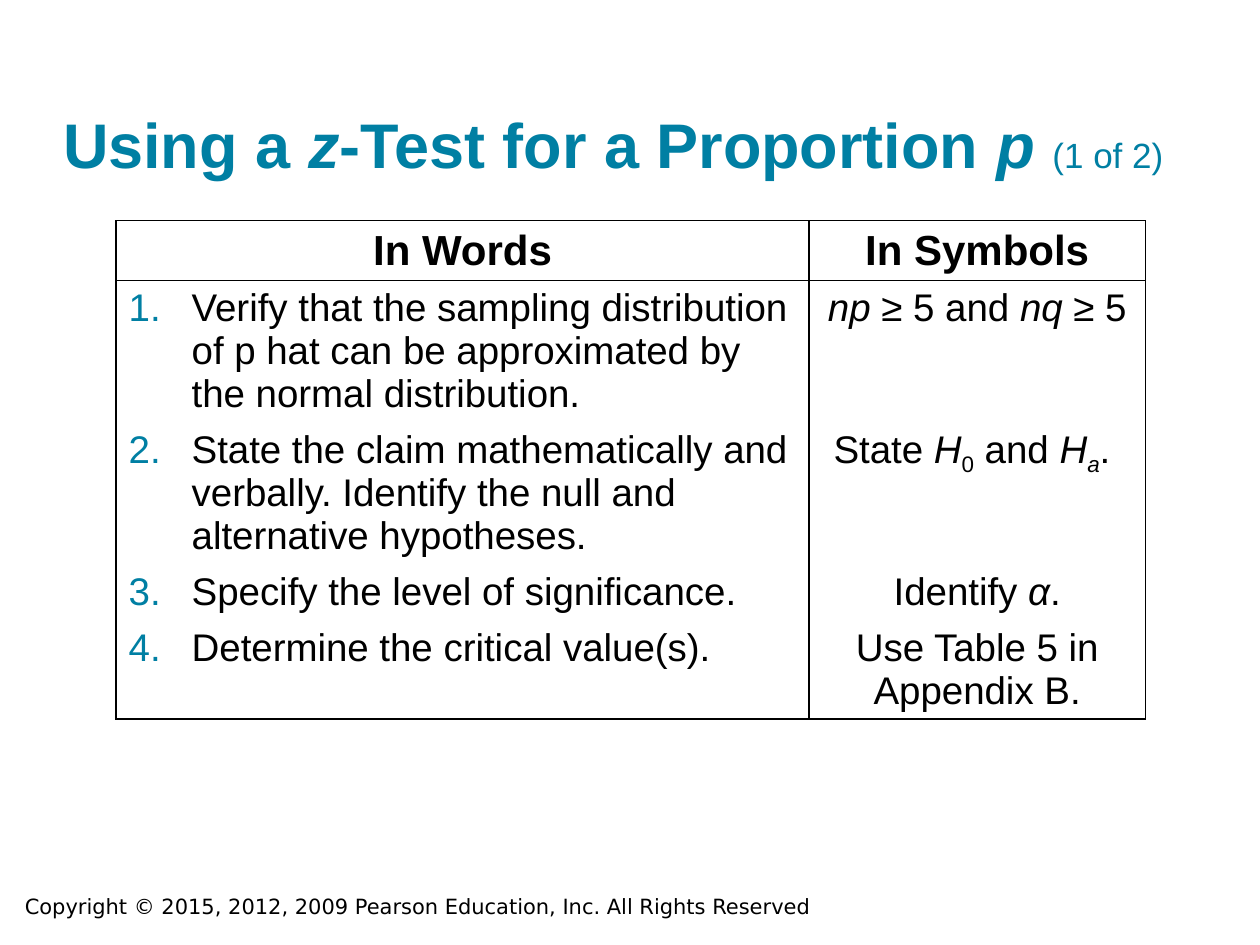
from lxml import etree
from pptx import Presentation
from pptx.dml.color import RGBColor
from pptx.enum.text import MSO_ANCHOR, MSO_AUTO_SIZE, PP_ALIGN
from pptx.oxml import parse_xml
from pptx.oxml.ns import nsdecls, qn
from pptx.util import Cm, Pt

LEFT, MID = PP_ALIGN.LEFT, PP_ALIGN.CENTER
LOW, NONE = MSO_ANCHOR.BOTTOM, MSO_AUTO_SIZE.NONE
TEAL, BLACK, WHITE = "007FA3", "000000", "FFFFFF"
hue = RGBColor.from_string


def write(frame, runs, size=22, font="Arial", color=BLACK, bold=False, align=LEFT, num=None):
    para = frame.paragraphs[0]
    para.alignment = align
    if num:
        props = para._p.get_or_add_pPr()
        props.set("marL", str(Cm(1.27)))
        props.set("indent", str(-Cm(1.27)))
        tint = etree.SubElement(props, qn("a:buClr"))
        etree.SubElement(tint, qn("a:srgbClr"), val=TEAL)
        etree.SubElement(props, qn("a:buFont"), typeface="+mj-lt")
        etree.SubElement(props, qn("a:buAutoNum"), type="arabicPeriod", startAt=str(num))
    for text, *marks in runs:
        run = para.add_run()
        run.text = text
        run.font.name = font
        run.font.size = Pt(20 if "small" in marks else size)
        run.font.bold = bold and "small" not in marks
        run.font.italic = "it" in marks
        run.font.color.rgb = hue(color)
        if "sub" in marks:
            run._r.get_or_add_rPr().set("baseline", "-25000")


def edge(cell, side, shown):
    fill = f'<a:solidFill><a:srgbClr val="{BLACK}"/></a:solidFill>' if shown else "<a:noFill/>"
    line = f'<a:ln{side} {nsdecls("a")} w="12700">{fill}</a:ln{side}>'
    cell._tc.get_or_add_tcPr().append(parse_xml(line))


deck = Presentation()
deck.slide_width, deck.slide_height = Cm(25.4), Cm(19.05)
slide = deck.slides.add_slide(deck.slide_layouts[5])

title = slide.shapes.title
title.left, title.top, title.width, title.height = Cm(1.27), Cm(0.61), Cm(22.86), Cm(3.05)
frame = title.text_frame
frame.margin_left = frame.margin_right = frame.margin_top = frame.margin_bottom = 0
frame.vertical_anchor = LOW
frame.auto_size = NONE
frame.word_wrap = True
write(frame, [("Using a ",), ("z", "it"), ("-Test for a Proportion ",), ("p ", "it"),
              ("(1 of 2)", "small")], size=36, color=TEAL, bold=True)

steps = [
    ("Verify that the sampling distribution of p hat can be approximated by the normal distribution.",
     [("np", "it"), (" ≥ 5 and ",), ("nq", "it"), (" ≥ 5",)]),
    ("State the claim mathematically and verbally. Identify the null and alternative hypotheses.",
     [("State ",), ("H", "it"), ("0", "sub"), (" and ",), ("H", "it"), ("a", "it", "sub"), (". ",)]),
    ("Specify the level of significance.", [("Identify ",), ("α", "it"), (".",)]),
    ("Determine the critical value(s).", [("Use Table 5 in Appendix B.",)]),
]
wide = [13.97, 6.78]
high = [1.2, 2.85, 2.85, 1.13, 2]
last = len(steps)
grid = slide.shapes.add_table(last + 1, 2, Cm(2.34), Cm(4.45), Cm(sum(wide)), Cm(sum(high))).table
grid.first_row = grid.horz_banding = False
for col, size in zip(grid.columns, wide):
    col.width = Cm(size)
for row, size in zip(grid.rows, high):
    row.height = Cm(size)

for n, row in enumerate(grid.rows):
    for cell in row.cells:
        for side, shown in (("L", True), ("R", True), ("T", n < 2), ("B", n in (0, last))):
            edge(cell, side, shown)
        cell.fill.solid()
        cell.fill.fore_color.rgb = hue(WHITE)

for cell, text in zip(grid.rows[0].cells, ("In Words", "In Symbols")):
    write(cell.text_frame, [(text,)], size=24, bold=True, align=MID)
for n, (words, signs) in enumerate(steps, 1):
    write(grid.cell(n, 0).text_frame, [(words,)], num=n)
    write(grid.cell(n, 1).text_frame, signs, align=MID)

foot = slide.shapes.add_textbox(Cm(0.25), Cm(17.88), Cm(19.89), Cm(0.76)).text_frame
foot.word_wrap = True
write(foot, [("Copyright © 2015, 2012, 2009 Pearson Education, Inc. All Rights Reserved",)],
      size=12, font="DejaVu Sans")

deck.save("out.pptx")
